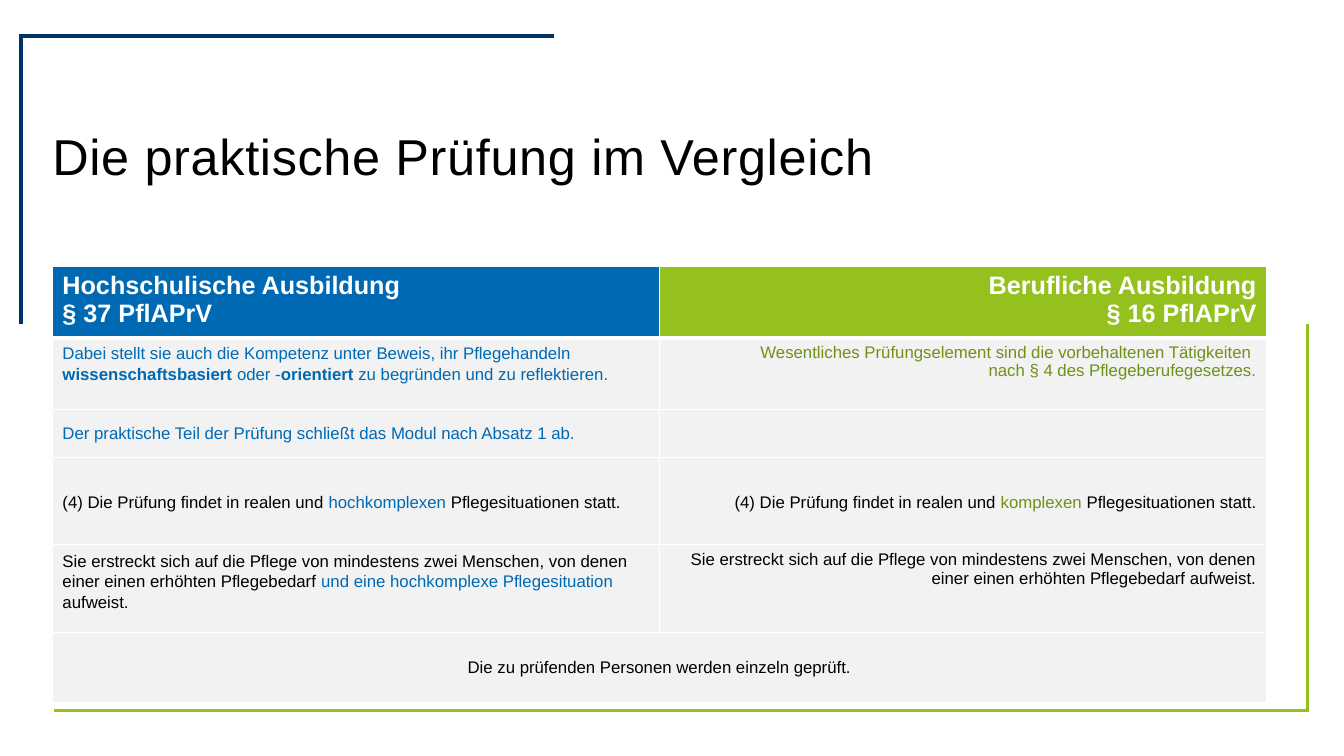
"""Build the slide that compares the two practical nursing exams."""
from dataclasses import dataclass
from typing import NamedTuple

from lxml.etree import SubElement as Sub
from pptx import Presentation
from pptx.dml.color import RGBColor as Rgb
from pptx.enum.text import MSO_ANCHOR as Anchor, PP_ALIGN as Align
from pptx.oxml.ns import qn
from pptx.util import Cm, Pt


@dataclass(frozen=True)
class Theme:
    font: str = "Arial"
    navy: str = "003369"
    blue: str = "0069B4"
    green: str = "95C11F"
    olive: str = "709117"
    grey: str = "F2F2F2"
    black: str = "000000"
    white: str = "FFFFFF"
    title: float = 36
    head: float = 18
    body: float = 12
    thick: float = 3
    thin: float = 1


THEME = Theme()


class Span(NamedTuple):
    text: str
    hue: str = THEME.black
    bold: bool = False


class Edge(NamedTuple):
    hue: str
    width: float


@dataclass(frozen=True)
class Box:
    lines: tuple[tuple[Span, ...], ...] = ()
    align: Align = Align.LEFT
    anchor: Anchor = Anchor.TOP
    lead: float = 1.0
    fill: str = THEME.grey
    size: float = THEME.body


def put(item: object, values: dict) -> None:
    for name, value in values.items():
        setattr(item, name, value)


def write(frame, box: Box, space: int = 0) -> None:
    for index, line in enumerate(box.lines):
        para = frame.add_paragraph() if index else frame.paragraphs[0]
        put(para, {"alignment": box.align, "line_spacing": box.lead})
        for span in line:
            for part, text in enumerate(span.text.split("\n")):
                if part:
                    para.add_line_break()
                run = para.add_run()
                run.text = text
                put(run.font, {"name": THEME.font, "size": Pt(box.size), "bold": span.bold})
                run.font.color.rgb = Rgb.from_string(span.hue)
                if space:
                    run.font._element.set("spc", str(space))


def border(cell, edges: dict[str, Edge]) -> None:
    props = cell._tc.get_or_add_tcPr()
    for side in "LRTB":
        line = Sub(props, qn(f"a:ln{side}"))
        if side in edges:
            line.set("w", str(Pt(edges[side].width)))
            Sub(Sub(line, qn("a:solidFill")), qn("a:srgbClr")).set("val", edges[side].hue)
        else:
            Sub(line, qn("a:noFill"))


def grid(slide, left: float, top: float, cols: list[float], rows: list[float]):
    table = slide.shapes.add_table(len(rows), len(cols), Cm(left), Cm(top),
                                   Cm(sum(cols)), Cm(sum(rows))).table
    put(table, {"first_row": False, "horz_banding": False})
    for col, width in zip(table.columns, cols):
        col.width = Cm(width)
    for row, height in zip(table.rows, rows):
        row.height = Cm(height)
    return table


def draw_frame(slide) -> None:
    table = grid(slide, 0.53, 0.91, [0.82, 12.6, 19], [7.26, 9.73])
    navy, green = Edge(THEME.navy, THEME.thick), Edge(THEME.green, THEME.thick)
    edges = {(0, 0): {"L": navy, "T": navy}, (0, 1): {"T": navy},
             (1, 1): {"R": green, "B": green}, (1, 2): {"R": green, "B": green}}
    for row in range(2):
        table.cell(row, row).merge(table.cell(row, row + 1))
        for col in range(3):
            cell = table.cell(row, col)
            border(cell, edges.get((row, col), {}))
            cell.fill.background()


def draw_table(slide, rows: list[tuple[float, tuple[Box, ...]]]) -> None:
    table = grid(slide, 1.32, 6.71, [15.3, 15.3], [height for height, _ in rows])
    thin, thick = Edge(THEME.white, THEME.thin), Edge(THEME.white, THEME.thick)
    for index, (_, boxes) in enumerate(rows):
        if len(boxes) == 1:
            table.cell(index, 0).merge(table.cell(index, 1))
        for col, box in enumerate(boxes):
            cell = table.cell(index, col)
            border(cell, {"L": thin, "R": thin, "T": thick if index == 1 else thin,
                          "B": thick if index == 0 else thin})
            cell.fill.solid()
            cell.fill.fore_color.rgb = Rgb.from_string(box.fill)
            cell.vertical_anchor = box.anchor
            write(cell.text_frame, box)


def draw_title(slide, text: str) -> None:
    frame = slide.shapes.add_textbox(Cm(1.32), Cm(3.33), Cm(30.8), Cm(1.65)).text_frame
    put(frame, {"word_wrap": True, "margin_left": 0, "margin_right": 0,
                "margin_top": 0, "margin_bottom": 0})
    write(frame, Box(((Span(text),),), lead=0.9, size=THEME.title), space=50)


def head(name: str, law: str, align: Align, fill: str) -> Box:
    lines = tuple((Span(text, THEME.white, True),) for text in (name, law))
    return Box(lines, align, fill=fill, size=THEME.head)


def scene(word: str, hue: str, align: Align) -> Box:
    line = (Span("(4) Die Prüfung findet in realen und "), Span(word, hue),
            Span(" Pflegesituationen statt."))
    return Box((line,), align, Anchor.MIDDLE, 1.1)


BLUE, OLIVE = THEME.blue, THEME.olive
LEFT, RIGHT = Align.LEFT, Align.RIGHT
CARE = ("Sie erstreckt sich auf die Pflege von mindestens zwei Menschen, "
        "von denen einer einen erhöhten Pflegebedarf")
ROWS = [
    (1.8, (head("Hochschulische Ausbildung", "§ 37 PflAPrV", LEFT, BLUE),
           head("Berufliche Ausbildung", "§ 16 PflAPrV", RIGHT, THEME.green))),
    (1.8, (Box(((Span("Dabei stellt sie auch die Kompetenz unter Beweis, ihr Pflegehandeln ", BLUE),
                 Span("wissenschaftsbasiert", BLUE, True), Span(" oder -", BLUE),
                 Span("orientiert", BLUE, True),
                 Span(" zu begründen und zu reflektieren.", BLUE)),), lead=1.1),
           Box(((Span("Wesentliches Prüfungselement sind die vorbehaltenen Tätigkeiten \n"
                      "nach § 4 des Pflegeberufegesetzes.", OLIVE),),), RIGHT))),
    (1.22, (Box(((Span("Der praktische Teil der Prüfung schließt das Modul nach Absatz 1 ab.",
                       BLUE),),), anchor=Anchor.MIDDLE), Box())),
    (2.2, (scene("hochkomplexen", BLUE, LEFT), scene("komplexen", OLIVE, RIGHT))),
    (2.2, (Box(((Span(CARE), Span(" und eine hochkomplexe Pflegesituation ", BLUE),
                 Span("aufweist.")),), lead=1.1),
           Box(((Span(f"{CARE} aufweist."),),), RIGHT))),
    (1.78, (Box(((Span("Die zu prüfenden Personen werden einzeln geprüft."),),),
                Align.CENTER, Anchor.MIDDLE),)),
]


def main() -> None:
    deck = Presentation()
    put(deck, {"slide_width": Cm(33.87), "slide_height": Cm(19.05)})
    slide = deck.slides.add_slide(deck.slide_layouts[6])
    draw_frame(slide)
    draw_title(slide, "Die praktische Prüfung im Vergleich")
    draw_table(slide, ROWS)
    deck.save("out.pptx")


if __name__ == "__main__":
    main()
